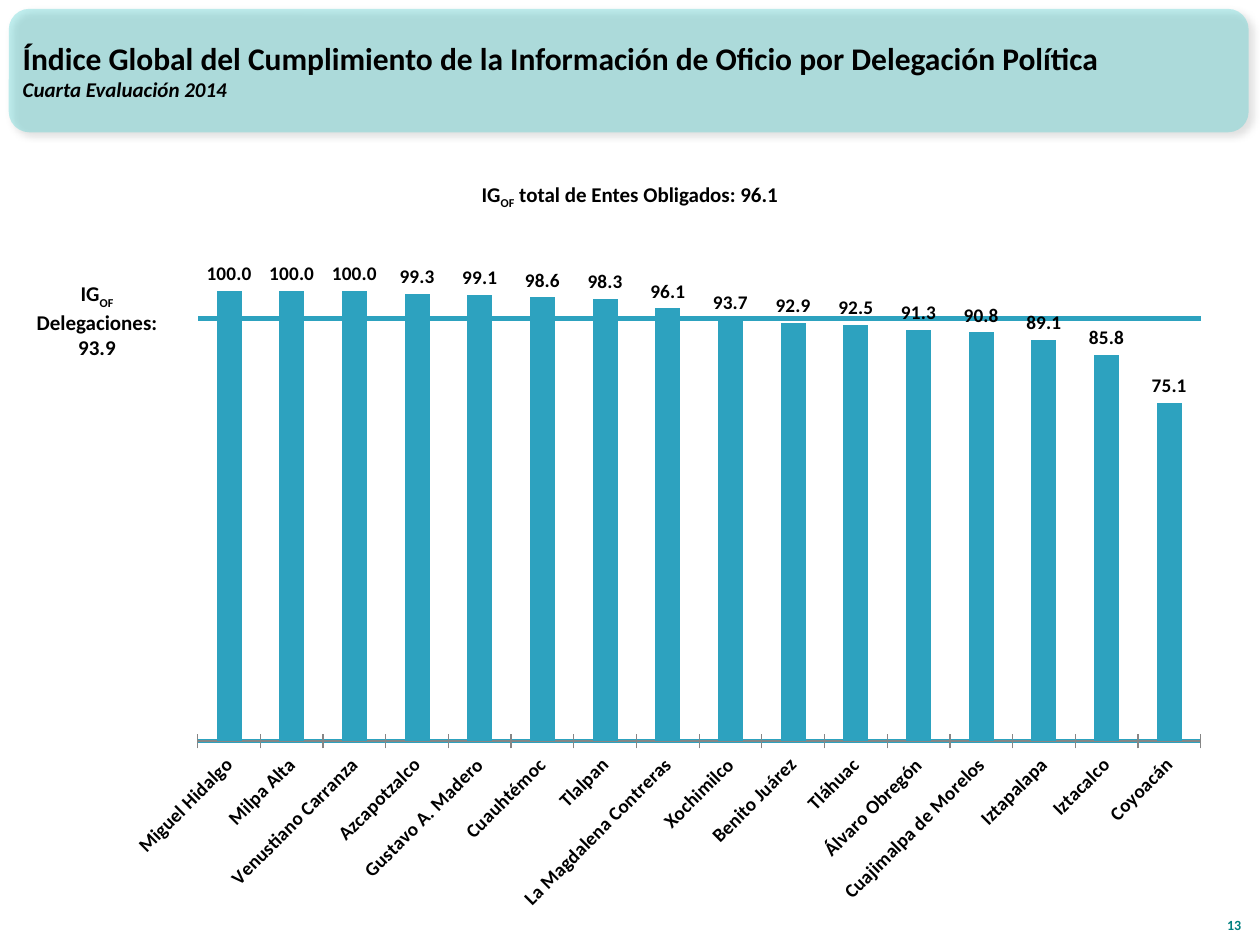
import pptx
import pptx.chart.data
import pptx.dml.color
import pptx.enum.chart
import pptx.enum.shapes
import pptx.enum.text
import pptx.oxml
import pptx.oxml.ns
import pptx.util

Inches = pptx.util.Inches
Align = pptx.enum.text.PP_ALIGN
Anchor = pptx.enum.text.MSO_ANCHOR
NAMESPACES = pptx.oxml.ns.nsdecls("a", "c")

COLORS = {"text": "000000", "banner": "33CCCC", "bar": "2DA2BF",
          "number": "008080", "axis": "868686"}

SCORES = {
    "Miguel Hidalgo": 100, "Milpa Alta": 100, "Venustiano Carranza": 100,
    "Azcapotzalco": 99.3, "Gustavo A. Madero": 99.1, "Cuauhtémoc": 98.6,
    "Tlalpan": 98.3, "La Magdalena Contreras": 96.1, "Xochimilco": 93.7,
    "Benito Juárez": 92.9, "Tláhuac": 92.5, "Álvaro Obregón": 91.3,
    "Cuajimalpa de Morelos": 90.8, "Iztapalapa": 89.1, "Iztacalco": 85.8,
    "Coyoacán": 75.1,
}
AVERAGE = 93.9
PLOT_AREA = {"x": 0.058, "y": 0.068, "w": 0.92, "h": 0.658}


def color(name):
    return pptx.dml.color.RGBColor.from_string(COLORS[name])


def set_all(target, values):
    for name, value in values.items():
        setattr(target, name, value)


class SlideBuilder:
    font_name = "Calibri"

    def __init__(self, deck):
        self.page = deck.slides.add_slide(deck.slide_layouts[5])

    def style(self, font, size, color_name="text", **extra):
        set_all(font, {"name": self.font_name, "size": pptx.util.Pt(size), "bold": True, **extra})
        font.color.rgb = color(color_name)

    def banner(self, left, top, width, height):
        shape = self.page.shapes.add_shape(
            pptx.enum.shapes.MSO_SHAPE.ROUNDED_RECTANGLE,
            Inches(left), Inches(top), Inches(width), Inches(height))
        shape.fill.solid()
        shape.fill.fore_color.rgb = color("banner")
        shape.line.fill.background()
        fill_color = shape.element.xpath("./p:spPr/a:solidFill/a:srgbClr")[0]
        fill_color.append(pptx.oxml.parse_xml(f'<a:alpha {NAMESPACES} val="30000"/>'))
        shape.element.spPr.append(pptx.oxml.parse_xml(
            f'<a:effectLst {NAMESPACES}><a:outerShdw blurRad="50800" dist="38100" '
            'dir="2700000" algn="tl" rotWithShape="0"><a:srgbClr val="000000">'
            '<a:alpha val="40000"/></a:srgbClr></a:outerShdw></a:effectLst>'))
        self.page.shapes.title.element.addprevious(shape.element)

    def title(self, left, top, width, height, heading, subtitle):
        box = self.page.shapes.title
        set_all(box, {"left": Inches(left), "top": Inches(top),
                      "width": Inches(width), "height": Inches(height)})
        set_all(box.text_frame, {"word_wrap": True, "vertical_anchor": Anchor.MIDDLE,
                                 "auto_size": pptx.enum.text.MSO_AUTO_SIZE.NONE})
        para = box.text_frame.paragraphs[0]
        para.alignment = Align.LEFT
        self.span(para, heading, 18)
        para = box.text_frame.add_paragraph()
        para.alignment = Align.LEFT
        self.span(para, subtitle, 12, italic=True)

    def span(self, para, text, size, color_name="text", subscript=False, **extra):
        span = para.add_run()
        span.text = text
        self.style(span.font, size, color_name, **extra)
        if subscript:
            span._r.get_or_add_rPr().set("baseline", "-25000")

    def text(self, left, top, width, height, lines, size=12, color_name="text",
             align=Align.CENTER, anchor=Anchor.TOP):
        box = self.page.shapes.add_textbox(
            Inches(left), Inches(top), Inches(width), Inches(height))
        frame = box.text_frame
        set_all(frame, {"word_wrap": True, "vertical_anchor": anchor})
        for index, line in enumerate(lines):
            para = frame.add_paragraph() if index else frame.paragraphs[0]
            para.alignment = align
            for text in line:
                self.span(para, text, size, color_name, subscript=text == "OF")

    def column_chart(self, left, top, width, height, scores, average):
        data = pptx.chart.data.CategoryChartData(number_format="0.0")
        data.categories = list(scores)
        data.add_series("Series 1", list(scores.values()))
        chart = self.page.shapes.add_chart(
            pptx.enum.chart.XL_CHART_TYPE.COLUMN_CLUSTERED,
            Inches(left), Inches(top), Inches(width), Inches(height), data).chart
        set_all(chart, {"has_legend": False, "has_title": False})
        self.style(chart.font, 11)

        plot = chart.plots[0]
        set_all(plot, {"gap_width": 150, "vary_by_categories": False, "has_data_labels": True})
        set_all(plot.data_labels, {
            "show_value": True, "number_format": "0.0", "number_format_is_linked": False,
            "position": pptx.enum.chart.XL_LABEL_POSITION.OUTSIDE_END})
        self.style(plot.data_labels.font, 11)
        bars = plot.series[0].format.fill
        bars.solid()
        bars.fore_color.rgb = color("bar")

        set_all(chart.value_axis, {"minimum_scale": 0, "maximum_scale": 100,
                                   "major_unit": average, "has_major_gridlines": True,
                                   "visible": False})
        grid = chart.value_axis.major_gridlines.format.line
        grid.width = pptx.util.Pt(2.5)
        grid.color.rgb = color("bar")

        axis = chart.category_axis
        axis.major_tick_mark = pptx.enum.chart.XL_TICK_MARK.CROSS
        axis.format.line.color.rgb = color("axis")
        self.style(axis.tick_labels.font, 11)
        chart.element.xpath(".//c:catAx/c:txPr/a:bodyPr")[0].set("rot", "-2700000")
        self.place_plot(chart)

    def place_plot(self, chart):
        area = chart.element.xpath(".//c:plotArea")[0]
        for layout in area.xpath("./c:layout"):
            area.remove(layout)
        modes = "".join(f'<c:{side}Mode val="edge"/>' for side in "xy")
        sizes = "".join(f'<c:{side} val="{value}"/>' for side, value in PLOT_AREA.items())
        area.insert(0, pptx.oxml.parse_xml(
            f'<c:layout {NAMESPACES}><c:manualLayout><c:layoutTarget val="inner"/>'
            f"{modes}{sizes}</c:manualLayout></c:layout>"))


def main():
    deck = pptx.Presentation()
    set_all(deck, {"slide_width": Inches(10), "slide_height": Inches(7.5)})
    slide = SlideBuilder(deck)
    slide.banner(0.07, 0.07, 9.84, 0.98)
    slide.title(0.08, 0.09, 9.17, 0.94,
                "Índice Global del Cumplimiento de la Información de Oficio por Delegación Política",
                "Cuarta Evaluación 2014")
    slide.column_chart(1.06, 1.94, 8.66, 5.43, SCORES, AVERAGE)
    slide.text(0.78, 1.39, 8.44, 0.3, [["IG", "OF", " total de Entes Obligados: 96.1"]])
    slide.text(0.16, 2.18, 1.22, 0.71, [["IG", "OF"], ["Delegaciones:"], [str(AVERAGE)]])
    slide.text(9.55, 7.06, 0.4, 0.4, [["13"]], size=8, color_name="number",
               align=Align.RIGHT, anchor=Anchor.BOTTOM)
    deck.save("out.pptx")


if __name__ == "__main__":
    main()
